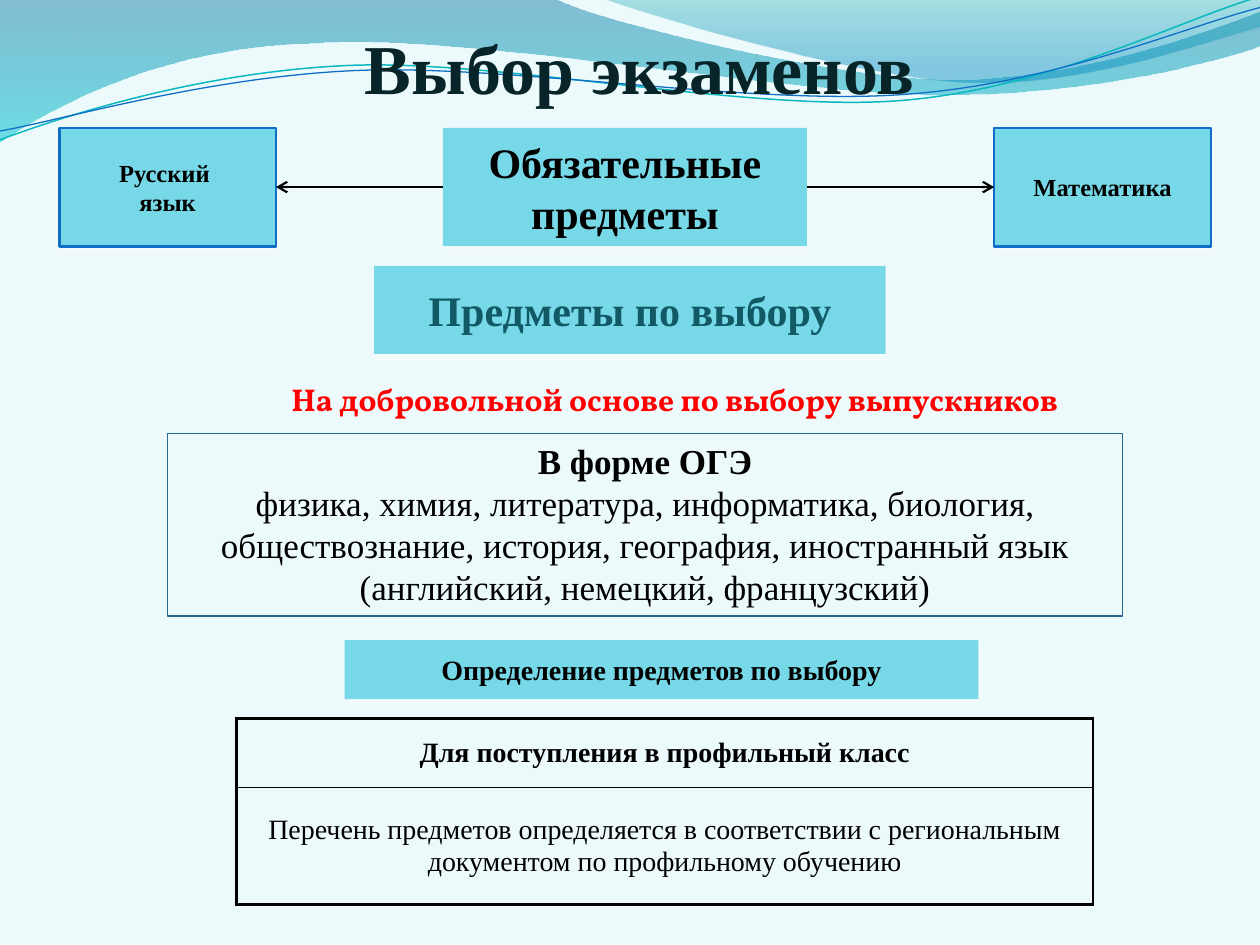
from lxml import etree
from pptx import Presentation
from pptx.dml.color import RGBColor
from pptx.enum.shapes import MSO_CONNECTOR, MSO_SHAPE
from pptx.enum.text import MSO_ANCHOR, MSO_AUTO_SIZE, PP_ALIGN
from pptx.oxml import parse_xml
from pptx.oxml.ns import qn
from pptx.util import Inches, Pt

RECTANGLE = MSO_SHAPE.RECTANGLE
STRAIGHT = MSO_CONNECTOR.STRAIGHT
CENTER = PP_ALIGN.CENTER
TOP, MIDDLE, BOTTOM = MSO_ANCHOR.TOP, MSO_ANCHOR.MIDDLE, MSO_ANCHOR.BOTTOM
NO_FIT = MSO_AUTO_SIZE.NONE

# Grid of 100 columns and 75 rows; every length below is counted in cells
CELL = Inches(0.1)
NAMESPACE = 'xmlns:a="http://schemas.openxmlformats.org/drawingml/2006/main"'
BLACK, BLUE, AQUA = "000000", "0F6FC6", "77D9E8"
SERIF = "Times New Roman"
colour = RGBColor.from_string


def draw_wave(points, closed):
    """Points of two numbers are corners; six numbers are a Bézier curve."""
    points = [[round(value * CELL) for value in point] for point in points]
    builder = slide.shapes.build_freeform(*points[0])
    builder.add_line_segments([point[-2:] for point in points[1:]], close=closed)
    wave = builder.convert_to_shape()
    wave.shadow.inherit = False
    # Turn the straight segments into curves where control points are given
    for point, segment in zip(points[1:], list(wave.element.iter(qn("a:lnTo")))):
        if len(point) == 6:
            segment.tag = qn("a:cubicBezTo")
            segment.clear()
            for x, y in zip(point[::2], point[1::2]):
                etree.SubElement(segment, qn("a:pt"),
                                 x=str(x - wave.left), y=str(y - wave.top))
    return wave


def write(frame, lines, size, text_colour=BLACK, font=SERIF, bold=True):
    """Fill a text frame with centred paragraphs."""
    frame.text = "\n".join(lines)
    for paragraph in frame.paragraphs:
        paragraph.alignment = CENTER
        paragraph.font.name = font
        paragraph.font.size = Pt(size)
        paragraph.font.bold = bold
        paragraph.font.color.rgb = colour(text_colour)


presentation = Presentation()
presentation.slide_width, presentation.slide_height = 100 * CELL, 75 * CELL
slide = presentation.slides.add_slide(presentation.slide_layouts[5])
shapes = slide.shapes
slide.background.fill.solid()
slide.background.fill.fore_color.rgb = colour("EDFAFC")

# Translucent waves: outline, then (position, colour, opacity) of each stop
bands = [
    ([(-0.1, -0.1), (44, -0.1), (47.6, 1.7, 66.4, 6.3, 75.8, 6.3),
      (85.3, 6.3, 95.8, 2.6, 100, 0.9), (100.1, 3.6),
      (98.3, 4.4, 87, 7.6, 74.6, 7.5), (62.2, 7.5, 38.2, 2.8, 25.7, 3.4),
      (12.9, 3.6, 4.6, 8.3, -0.1, 11.3)],
     [(0, "0074A1", 45), (100, "00C6CF", 55)]),
    ([(47.9, -0.1), (50.9, 1.1, 68.2, 6.2, 76.9, 6.5),
      (85.6, 6.9, 96.1, 3.2, 100, 2.1), (100, -0.1)],
     [(0, "00A1A9", 30), (80, "008BBF", 45)]),
]
for points, stops in bands:
    band = draw_wave(points, True)
    band.line.fill.background()
    stop_xml = "".join(
        f'<a:gs pos="{position * 1000}"><a:srgbClr val="{value}">'
        f'<a:alpha val="{opacity * 1000}"/></a:srgbClr></a:gs>'
        for position, value, opacity in stops)
    gradient = parse_xml(f'<a:gradFill {NAMESPACE}><a:gsLst>{stop_xml}</a:gsLst>'
                         '<a:lin ang="5400000" scaled="0"/></a:gradFill>')
    band.element.spPr.find(qn("a:custGeom")).addnext(gradient)

# Thin wave lines
strands = [
    ([(0, 11.1), (4.8, 9.3, 15.8, 5.7, 27.7, 5.2),
      (39.5, 4.7, 59.3, 8.9, 71.3, 8), (83.3, 7.1, 93.8, 1.5, 99.8, -0.2)],
     "0AB8BF", 0.85),
    ([(0, 10.4), (4.7, 9.6, 16.4, 6.1, 28.3, 5.6),
      (40.3, 5.1, 59.7, 8.4, 71.7, 7.5), (83.6, 6.7, 94.1, 2.1, 100, 0.6)],
     BLUE, 0.75),
]
for points, line_colour, width in strands:
    strand = draw_wave(points, False)
    strand.fill.background()
    strand.line.color.rgb = colour(line_colour)
    strand.line.width = Pt(width)

# Title, brought in front of the waves
title = shapes.title
title.left, title.top, title.width, title.height = [
    round(cells * CELL) for cells in (28.9, 3.1, 43.7, 5.5)]
frame = title.text_frame
frame.auto_size, frame.word_wrap, frame.vertical_anchor = NO_FIT, False, BOTTOM
frame.margin_left = frame.margin_right = frame.margin_bottom = 0
write(frame, ["Выбор экзаменов"], 40, "072428")
title.element.getparent().append(title.element)

# Filled boxes: place, text, size, text colour, outlined
boxes = [
    ((35.15, 10.15, 28.9, 9.4), ["Обязательные", "предметы"], 24, BLACK, False),
    ((4.7, 10.15, 17.2, 9.4), ["Русский ", "язык"], 14, BLACK, True),
    ((78.9, 10.15, 17.2, 9.4), ["Математика"], 14, BLACK, True),
    ((29.7, 21.1, 40.6, 7), ["Предметы по выбору"], 24, "115964", False),
    ((27.35, 50.8, 50.3, 4.7), ["Определение предметов по выбору"], 16, BLACK, False),
]
for place, lines, size, text_colour, outlined in boxes:
    box = shapes.add_shape(RECTANGLE, *[round(cells * CELL) for cells in place])
    box.fill.solid()
    box.fill.fore_color.rgb = colour(AQUA)
    if outlined:
        box.line.color.rgb = colour(BLUE)
        box.line.width = Pt(1.5)
    else:
        box.line.fill.background()
    box.element.spPr.append(parse_xml(
        f'<a:effectLst {NAMESPACE}><a:outerShdw blurRad="{Pt(4.5)}" dist="{Pt(3)}" '
        'dir="5400000" rotWithShape="0"><a:srgbClr val="FFFFFF">'
        '<a:alpha val="48000"/></a:srgbClr></a:outerShdw></a:effectLst>'))
    frame = box.text_frame
    frame.word_wrap, frame.vertical_anchor = False, MIDDLE
    frame.margin_left = frame.margin_right = 0
    frame.margin_top = frame.margin_bottom = 0
    write(frame, lines, size, text_colour)

# Table with one column
table = shapes.add_table(
    2, 1, *[round(cells * CELL) for cells in (18.75, 57, 68, 14.8)]).table
table.first_row = table.horz_banding = False
rows = [
    (5.5, "Для поступления в профильный класс", True, (2, 1, 2, 1)),
    (9.3, "Перечень предметов определяется в соответствии с региональным "
          "документом по профильному обучению", False, (2, 1, 1, 2)),
]
for index, (height, text, bold, borders) in enumerate(rows):
    table.rows[index].height = round(height * CELL)
    cell = table.cell(index, 0)
    cell.vertical_anchor = MIDDLE
    write(cell.text_frame, [text], 16, bold=bold)
    properties = cell._tc.get_or_add_tcPr()
    for side, width in zip("LRTB", borders):
        properties.append(parse_xml(
            f'<a:ln{side} {NAMESPACE} w="{Pt(width)}"><a:solidFill>'
            f'<a:srgbClr val="{BLACK}"/></a:solidFill></a:ln{side}>'))
    cell.fill.background()

# Arrows from the compulsory subjects to both sides
for start, end in [(35.15, 21.9), (64.05, 78.9)]:
    arrow = shapes.add_connector(
        STRAIGHT, *[round(cells * CELL) for cells in (start, 14.85, end, 14.85)])
    arrow.line.color.rgb = colour(BLACK)
    arrow.line.width = Pt(1.25)
    etree.SubElement(arrow.line._get_or_add_ln(), qn("a:tailEnd"), type="arrow")
    etree.SubElement(arrow.element.spPr, qn("a:effectLst"))

# Outlined list of optional subjects
subjects = shapes.add_shape(
    RECTANGLE, *[round(cells * CELL) for cells in (13.3, 34.4, 75.8, 14.5)])
subjects.shadow.inherit = False
subjects.fill.background()
subjects.line.color.rgb = colour("2E6792")
subjects.line.width = Pt(0.75)
subjects.text_frame.vertical_anchor = TOP
write(subjects.text_frame, [
    "В форме ОГЭ",
    "физика, химия, литература, информатика, биология, обществознание, история, "
    "география, иностранный язык (английский, немецкий, французский)",
], 20, bold=False)
subjects.text_frame.paragraphs[0].font.bold = True

# Red remark above the list
remark = shapes.add_textbox(*[round(cells * CELL) for cells in (21.9, 29.7, 63.3, 4)])
remark.text_frame.word_wrap = True
write(remark.text_frame, ["На добровольной основе по выбору выпускников"], 18,
      "FF0000", "Vollkorn")

presentation.save("out.pptx")
